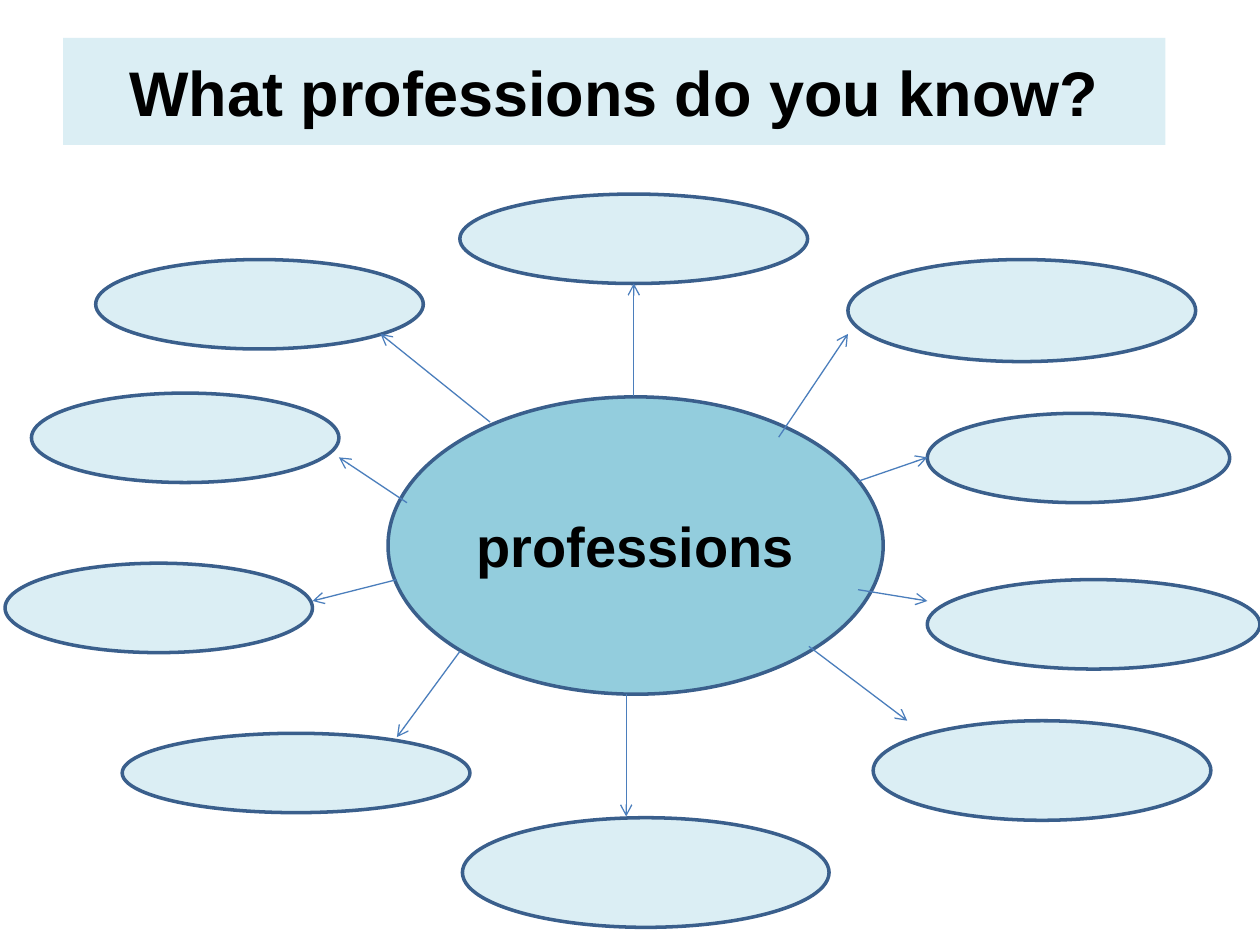
from dataclasses import dataclass

from lxml import etree
from pptx import Presentation
from pptx import util as u
from pptx.dml.color import RGBColor
from pptx.enum import shapes, text
from pptx.oxml.ns import qn


@dataclass(frozen=True)
class Theme:
    font: str = "Arial"
    title_size: int = 36
    hub_size: int = 32
    ink: str = "000000"
    pale: str = "DBEEF4"
    hub: str = "93CDDD"
    outline: str = "3A5F8C"
    arrow: str = "4B7EBC"
    outline_width: float = 2
    arrow_width: float = 0.75


@dataclass(frozen=True)
class Box:
    left: float
    top: float
    width: float
    height: float

    def emu(self) -> list[int]:
        return [u.Inches(v) for v in (self.left, self.top, self.width, self.height)]


@dataclass(frozen=True)
class Branch:
    """An empty answer bubble and the arrow that leads to it from the hub."""
    bubble: Box
    start: tuple[float, float]
    end: tuple[float, float]


THEME = Theme()
TITLE = Box(0.5, 0.3, 8.75, 0.85)
HUB = Box(3.08, 3.15, 3.93, 2.36)
# Counter-clockwise from the upper left
BRANCHES = [
    Branch(Box(0.76, 2.06, 2.6, 0.71), (3.89, 3.35), (3.02, 2.65)),
    Branch(Box(0.25, 3.12, 2.44, 0.71), (3.23, 3.99), (2.69, 3.63)),
    Branch(Box(0.04, 4.47, 2.44, 0.71), (3.15, 4.6), (2.48, 4.77)),
    Branch(Box(0.97, 5.82, 2.76, 0.63), (3.65, 5.17), (3.15, 5.85)),
    Branch(Box(3.67, 6.49, 2.91, 0.87), (4.97, 5.51), (4.97, 6.48)),
    Branch(Box(6.93, 5.72, 2.68, 0.79), (6.42, 5.13), (7.2, 5.72)),
    Branch(Box(7.36, 4.6, 2.64, 0.71), (6.81, 4.68), (7.36, 4.77)),
    Branch(Box(7.36, 3.28, 2.4, 0.71), (6.81, 3.82), (7.36, 3.63)),
    Branch(Box(6.73, 2.06, 2.76, 0.81), (6.18, 3.47), (6.73, 2.65)),
    Branch(Box(3.65, 1.54, 2.76, 0.71), (5.03, 3.14), (5.03, 2.25)),
]


def fill_solid(sp, color: str) -> None:
    sp.fill.solid()
    sp.fill.fore_color.rgb = RGBColor.from_string(color)


def write_heading(sp, wording: str, size: int) -> None:
    tf = sp.text_frame
    tf.text = wording
    tf.word_wrap = True
    tf.auto_size = text.MSO_AUTO_SIZE.NONE
    tf.vertical_anchor = text.MSO_ANCHOR.MIDDLE
    p = tf.paragraphs[0]
    p.alignment = text.PP_ALIGN.CENTER
    font = p.runs[0].font
    font.name, font.size, font.bold = THEME.font, u.Pt(size), True
    font.color.rgb = RGBColor.from_string(THEME.ink)


def add_title(s, wording: str) -> None:
    sp = s.shapes.title
    sp.left, sp.top, sp.width, sp.height = TITLE.emu()
    fill_solid(sp, THEME.pale)
    write_heading(sp, wording, THEME.title_size)


def add_ellipse(s, box: Box, color: str):
    sp = s.shapes.add_shape(shapes.MSO_SHAPE.OVAL, *box.emu())
    sp.shadow.inherit = False
    fill_solid(sp, color)
    sp.line.color.rgb = RGBColor.from_string(THEME.outline)
    sp.line.width = u.Pt(THEME.outline_width)
    return sp


def add_arrow(s, start: tuple[float, float], end: tuple[float, float]) -> None:
    ends = [u.Inches(v) for v in (*start, *end)]
    cxn = s.shapes.add_connector(shapes.MSO_CONNECTOR.STRAIGHT, *ends)
    cxn.line.color.rgb = RGBColor.from_string(THEME.arrow)
    cxn.line.width = u.Pt(THEME.arrow_width)
    etree.SubElement(cxn.line._get_or_add_ln(), qn("a:tailEnd"), type="arrow")
    etree.SubElement(cxn._element.spPr, qn("a:effectLst"))


def main() -> None:
    prs = Presentation()
    prs.slide_width, prs.slide_height = u.Inches(10), u.Inches(7.5)
    s = prs.slides.add_slide(prs.slide_layouts[5])

    add_title(s, "What professions do you know?")
    write_heading(add_ellipse(s, HUB, THEME.hub), "professions", THEME.hub_size)
    for branch in BRANCHES:
        add_ellipse(s, branch.bubble, THEME.pale)
    for branch in BRANCHES:
        add_arrow(s, branch.start, branch.end)

    prs.save("out.pptx")


if __name__ == "__main__":
    main()
